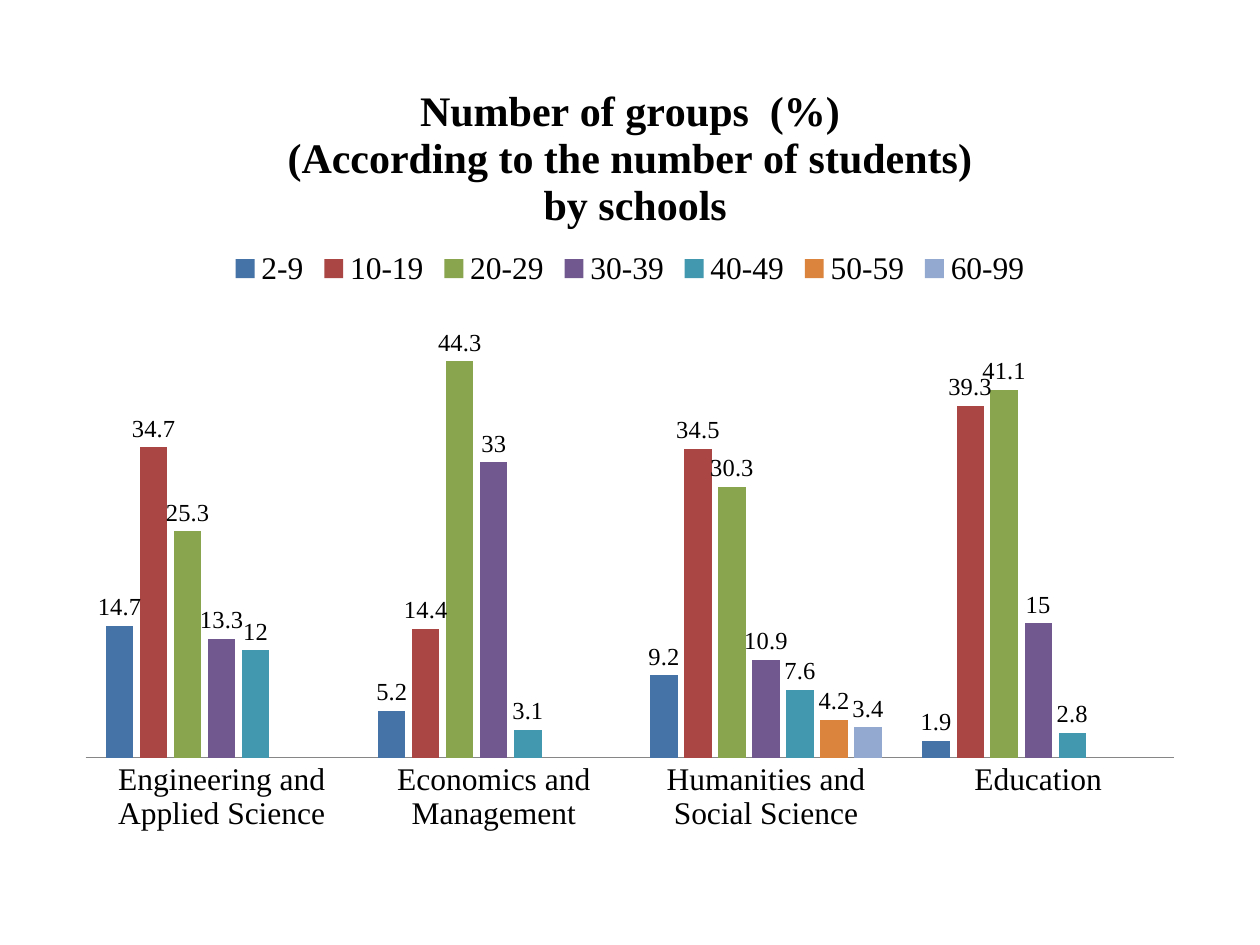
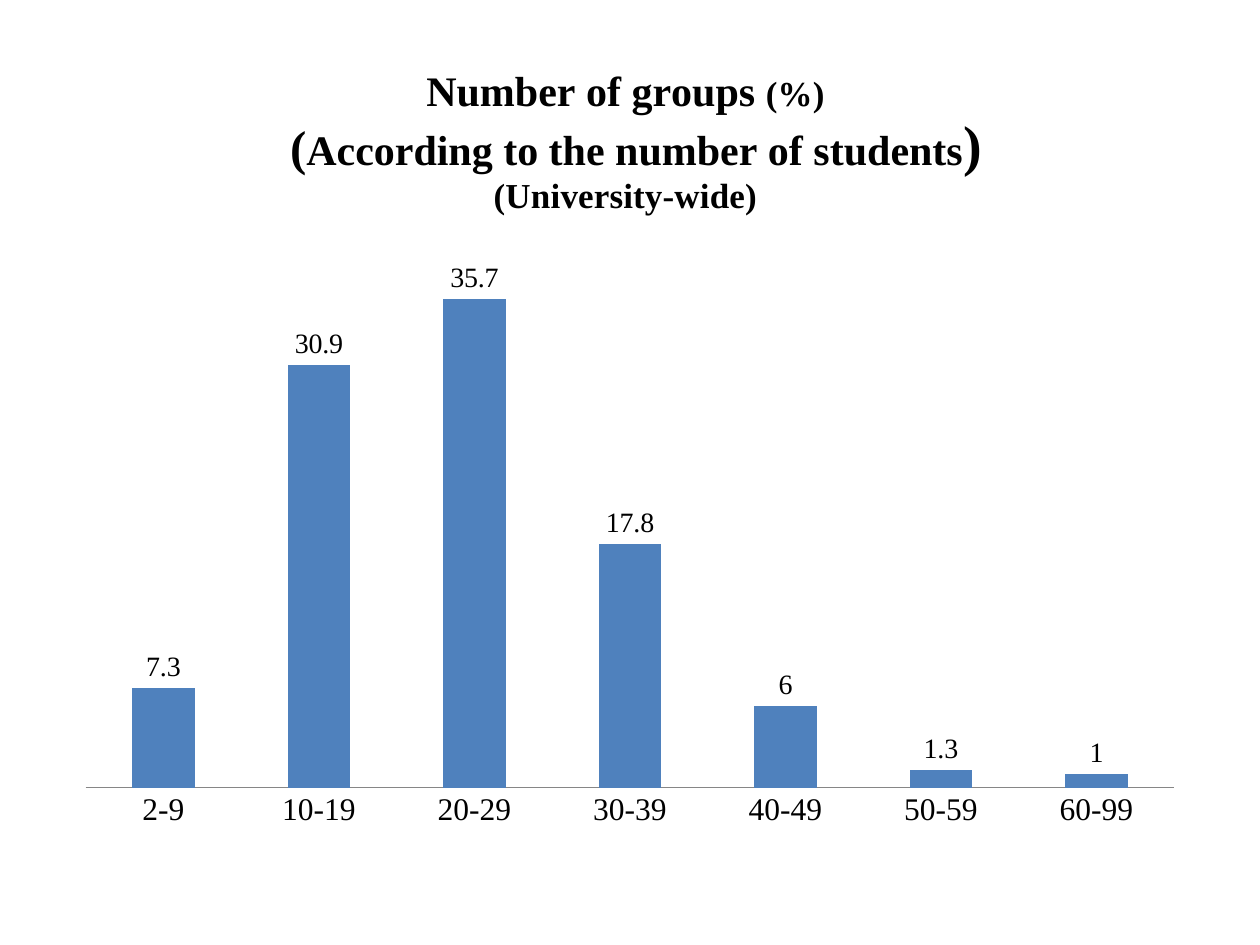
from lxml.etree import SubElement
from pptx import Presentation
from pptx.chart.data import CategoryChartData
from pptx.dml.color import RGBColor
from pptx.enum.chart import XL_CHART_TYPE as ChartType
from pptx.enum.chart import XL_LABEL_POSITION as LabelPosition
from pptx.enum.chart import XL_LEGEND_POSITION as LegendPosition
from pptx.enum.chart import XL_TICK_MARK as TickMark
from pptx.oxml.ns import qn
from pptx.util import Inches, Pt

FONT = "Times New Roman"
BLACK = "000000"
AXIS_GREY = "868686"
BLUE = "4F81BD"
SCHOOL_COLORS = ["4572A7", "AA4643", "89A54E", "71588F", "4198AF", "DB843D", "93A9CF"]
GROUP_SIZES = ["2-9", "10-19", "20-29", "30-39", "40-49", "50-59", "60-99"]
SCHOOLS = {
    "Engineering and Applied Science": [14.7, 34.7, 25.3, 13.3, 12, None, None],
    "Economics and Management": [5.2, 14.4, 44.3, 33, 3.1, None, None],
    "Humanities and Social Science": [9.2, 34.5, 30.3, 10.9, 7.6, 4.2, 3.4],
    "Education": [1.9, 39.3, 41.1, 15, 2.8, None, None],
}
UNIVERSITY = [7.3, 30.9, 35.7, 17.8, 6, 1.3, 1]


def color(hex_string):
    """Return the colour for a hex string."""
    return RGBColor.from_string(hex_string)


def format_font(font, size, bold=False):
    """Give a font the shared face and colour."""
    font.name = FONT
    font.size = Pt(size)
    font.bold = bold
    font.color.rgb = color(BLACK)


def add_text(paragraph, text, size=24, bold=True):
    """Append a formatted run to a paragraph."""
    run = paragraph.add_run()
    run.text = text
    format_font(run.font, size, bold)


def add_title(chart, lines):
    """Write the chart title, one paragraph per line of (text, size) runs."""
    chart.has_title = True
    frame = chart.chart_title.text_frame
    for index, runs in enumerate(lines):
        paragraph = frame.add_paragraph() if index else frame.paragraphs[0]
        for text, size in runs:
            add_text(paragraph, text, size=size)


def place_plot(chart, **fractions):
    """Fix the inner plot area by x, y, w and h fractions of the chart."""
    plot_area = chart.element.xpath("c:chart/c:plotArea")[0]
    for old_layout in plot_area.findall(qn("c:layout")):
        plot_area.remove(old_layout)
    layout = SubElement(plot_area, qn("c:layout"))
    plot_area.insert(0, layout)
    manual = SubElement(layout, qn("c:manualLayout"))
    settings = {"layoutTarget": "inner", "xMode": "edge", "yMode": "edge", **fractions}
    for tag, value in settings.items():
        SubElement(manual, qn(f"c:{tag}")).set("val", str(value))


def format_axes(chart, maximum):
    """Hide the value axis and style the category axis."""
    values = chart.value_axis
    values.minimum_scale, values.maximum_scale = 0, maximum
    values.has_major_gridlines = False
    values.visible = False
    categories = chart.category_axis
    categories.major_tick_mark = categories.minor_tick_mark = TickMark.NONE
    categories.format.line.color.rgb = color(AXIS_GREY)
    format_font(categories.tick_labels.font, 18)


def format_series(series, fill, label_size):
    """Colour one series and show its values above the columns."""
    series.format.fill.solid()
    series.format.fill.fore_color.rgb = color(fill)
    labels = series.data_labels
    labels.show_value = True
    labels.position = LabelPosition.OUTSIDE_END
    format_font(labels.font, label_size)


def add_column_chart(slide, box, categories, series_values, title, colors, label_size, maximum, plot_box):
    """Add a column chart in the given box and return it."""
    data = CategoryChartData()
    data.categories = categories
    for name, values in series_values.items():
        data.add_series(name, values)
    chart = slide.shapes.add_chart(ChartType.COLUMN_CLUSTERED, *map(Inches, box), data).chart
    format_font(chart.font, 10)
    add_title(chart, title)
    chart.has_legend = False
    plot = chart.plots[0]
    plot.gap_width, plot.overlap = 150, -25
    plot.vary_by_categories = False
    for series, fill in zip(plot.series, colors):
        format_series(series, fill, label_size)
    format_axes(chart, maximum)
    place_plot(chart, **plot_box)
    return chart


def build_schools_slide(slide, box):
    """Chart the group sizes of each school, with a legend on top."""
    title = [
        [("Number of groups  (%)", 24)],
        [("(According to the number of students)", 24)],
        [(" by schools", 24)],
    ]
    series_values = dict(zip(GROUP_SIZES, zip(*SCHOOLS.values())))
    chart = add_column_chart(
        slide, box, list(SCHOOLS), series_values, title, SCHOOL_COLORS,
        label_size=14, maximum=50, plot_box={"x": 0.02, "y": 0.32, "w": 0.96, "h": 0.57},
    )
    chart.has_legend = True
    chart.legend.position = LegendPosition.TOP
    chart.legend.include_in_layout = False
    format_font(chart.legend.font, 18)


def build_university_slide(slide, box):
    """Chart the group sizes of the whole university."""
    title = [
        [("Number of groups ", 24), ("(%) ", 20)],
        [(" (", 28), ("According to the number of students", 24), (")", 32)],
        [("(University-wide) ", 20)],
    ]
    add_column_chart(
        slide, box, GROUP_SIZES, {"Series 1": UNIVERSITY}, title, [BLUE],
        label_size=16, maximum=40, plot_box={"x": 0.02, "y": 0.25, "w": 0.96, "h": 0.68},
    )


def main():
    """Build and save the presentation."""
    presentation = Presentation()
    presentation.slide_width, presentation.slide_height = Inches(10), Inches(7.5)
    blank = presentation.slide_layouts[6]
    build_schools_slide(presentation.slides.add_slide(blank), (0.5, 0.47, 9, 6.23))
    build_university_slide(presentation.slides.add_slide(blank), (0.5, 0.31, 9, 6.39))
    presentation.save("out.pptx")


if __name__ == "__main__":
    main()
